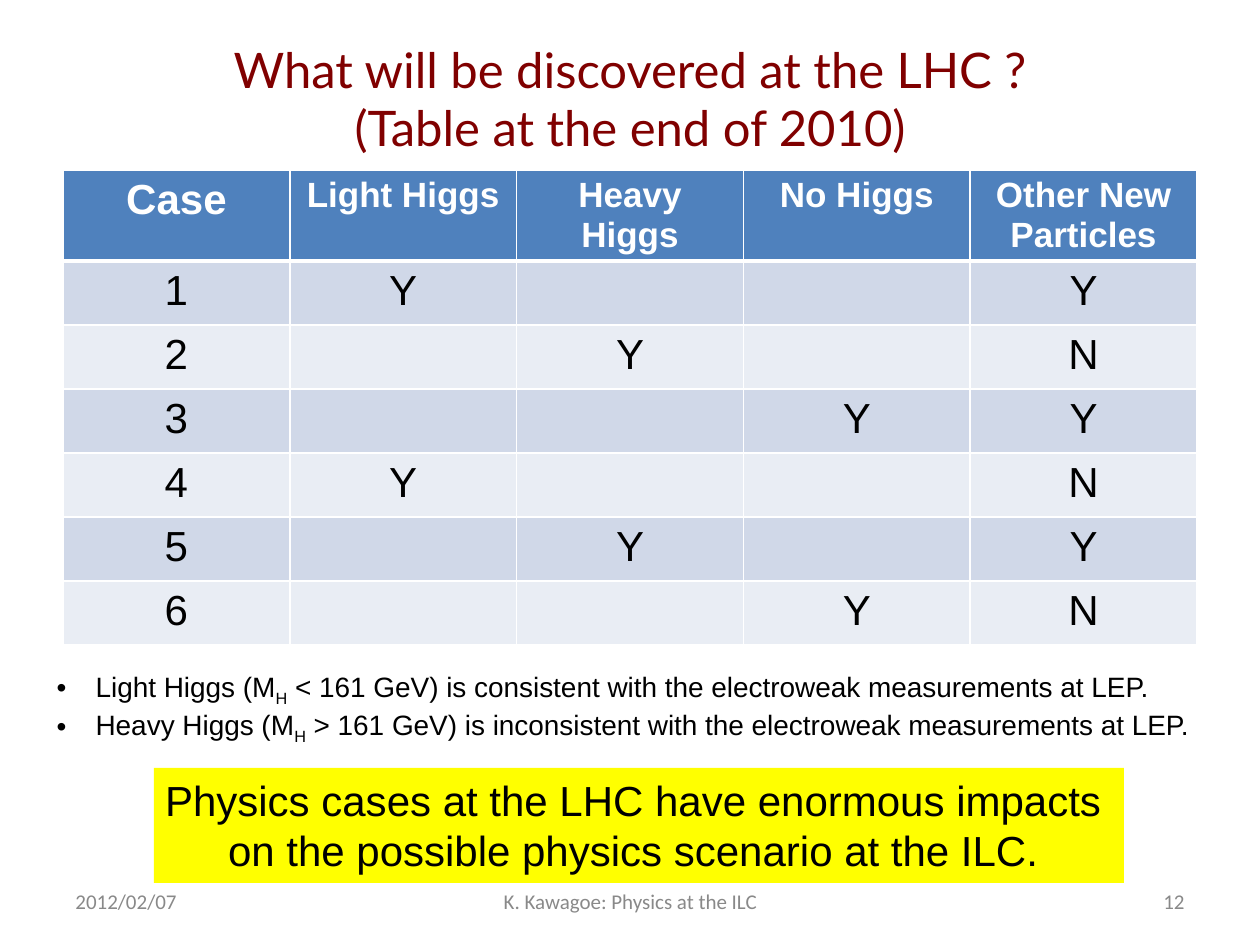
from lxml.etree import SubElement
from pptx import Presentation
from pptx.dml.color import RGBColor
from pptx.enum.shapes import MSO_SHAPE
from pptx.enum.text import MSO_ANCHOR, MSO_AUTO_SIZE, PP_ALIGN
from pptx.oxml import parse_xml
from pptx.oxml.ns import nsdecls, qn
from pptx.util import Emu, Pt

SCALE = 914400 / 126
COLORS = {
    "title": "800000", "text": "000000", "muted": "898989",
    "white": "FFFFFF", "head": "4F81BD", "odd": "D0D8E8",
    "even": "E9EDF4", "key": "FFFF00",
}
HEADS = ["Case", "Light Higgs", "Heavy Higgs", "No Higgs", "Other New Particles"]
CASES = [
    ["1", "Y", "", "", "Y"],
    ["2", "", "Y", "", "N"],
    ["3", "", "", "Y", "Y"],
    ["4", "Y", "", "", "N"],
    ["5", "", "Y", "", "Y"],
    ["6", "", "", "Y", "N"],
]
NOTES = [
    ["Light Higgs (M", "H",
     " < 161 GeV) is consistent with the electroweak measurements at LEP."],
    ["Heavy Higgs (M", "H",
     " > 161 GeV) is inconsistent with the electroweak measurements at LEP."],
]
FOOT = [
    (63, 294, "2012/02/07", PP_ALIGN.LEFT),
    (431, 399, "K. Kawagoe: Physics at the ILC", PP_ALIGN.CENTER),
    (903, 294, "12", PP_ALIGN.RIGHT),
]


def px(n):
    return Emu(round(n * SCALE))


def rgb(name):
    return RGBColor.from_string(COLORS[name])


def place(shape, x, y, w, h):
    shape.left, shape.top, shape.width, shape.height = map(px, (x, y, w, h))


def write(par, text, size=24, font="Arial", color="text", bold=False,
          align=PP_ALIGN.CENTER, base=None):
    """Add one formatted run to a paragraph."""
    par.alignment = align
    run = par.add_run()
    run.text = text
    run.font.size = Pt(size)
    run.font.name = font
    run.font.bold = bold
    run.font.color.rgb = rgb(color)
    if base:
        run.font._element.set("baseline", str(base * 1000))


def add_title(slide):
    title = slide.shapes.title
    place(title, 63, 38, 1134, 120)
    frame = title.text_frame
    frame.vertical_anchor = MSO_ANCHOR.MIDDLE
    frame.auto_size = MSO_AUTO_SIZE.NONE
    par = frame.paragraphs[0]
    style = dict(size=28, font="Lato", color="title")
    write(par, "What will be discovered at the LHC ?", **style)
    par.add_line_break()
    write(par, "(Table at the end of 2010)", **style)


def add_notes(slide):
    body = slide.placeholders[1]
    place(body, 44, 663, 1179, 81)
    frame = body.text_frame
    frame.word_wrap = False
    frame.auto_size = MSO_AUTO_SIZE.NONE
    for i, parts in enumerate(NOTES):
        par = frame.add_paragraph() if i else frame.paragraphs[0]
        props = par._p.get_or_add_pPr()
        props.set("marL", str(px(39)))
        props.set("indent", str(px(-39)))
        SubElement(props, qn("a:buFont"), typeface="Arial")
        SubElement(props, qn("a:buChar"), char="•")
        par.space_before = Pt(0)
        for part in parts:
            write(par, part, size=16, align=PP_ALIGN.LEFT,
                  base=-25 if part == "H" else None)


def add_edges(cell, top, low):
    """Draw white cell borders; top and low are widths in points."""
    props = cell._tc.get_or_add_tcPr()
    for i, (side, width) in enumerate(zip("LRTB", (1, 1, top, low))):
        props.insert(i, parse_xml(
            f'<a:ln{side} {nsdecls("a")} w="{Pt(width)}"><a:solidFill>'
            f'<a:srgbClr val="{COLORS["white"]}"/></a:solidFill></a:ln{side}>'))


def add_grid(slide):
    rows = [HEADS] + CASES
    table = slide.shapes.add_table(len(rows), len(HEADS), px(63), px(170),
                                   px(1134), px(475)).table
    table.horz_banding = False
    for r, row in enumerate(rows):
        table.rows[r].height = px(64 if r else 91)
        fill = ("even", "odd")[r % 2] if r else "head"
        for c, text in enumerate(row):
            cell = table.cell(r, c)
            cell.fill.solid()
            cell.fill.fore_color.rgb = rgb(fill)
            add_edges(cell, 3 if r == 1 else 1, 1 if r else 3)
            if text:
                write(cell.text_frame.paragraphs[0], text,
                      size=24 if r or c == 0 else 20, bold=r == 0,
                      color="text" if r else "white")


def add_foot(slide):
    for x, w, text, align in FOOT:
        box = slide.shapes.add_textbox(px(x), px(876), px(w), px(50))
        frame = box.text_frame
        frame.word_wrap = True
        frame.vertical_anchor = MSO_ANCHOR.MIDDLE
        write(frame.paragraphs[0], text, size=12, font="Calibri",
              color="muted", align=align)


def add_key(slide):
    box = slide.shapes.add_shape(MSO_SHAPE.RECTANGLE, px(154), px(768),
                                 px(970), px(115))
    box.shadow.inherit = False
    box.fill.solid()
    box.fill.fore_color.rgb = rgb("key")
    box.line.fill.background()
    frame = box.text_frame
    frame.word_wrap = False
    frame.vertical_anchor = MSO_ANCHOR.TOP
    write(frame.paragraphs[0], "Physics cases at the LHC have enormous impacts ")
    write(frame.add_paragraph(), "on the possible physics scenario at the ILC. ")


def main():
    deck = Presentation()
    deck.slide_width, deck.slide_height = px(1260), px(945)
    slide = deck.slides.add_slide(deck.slide_layouts[1])
    # Heading and table of cases
    add_title(slide)
    add_grid(slide)
    # Remarks, footer and conclusion
    add_notes(slide)
    add_foot(slide)
    add_key(slide)
    deck.save("out.pptx")


if __name__ == "__main__":
    main()
